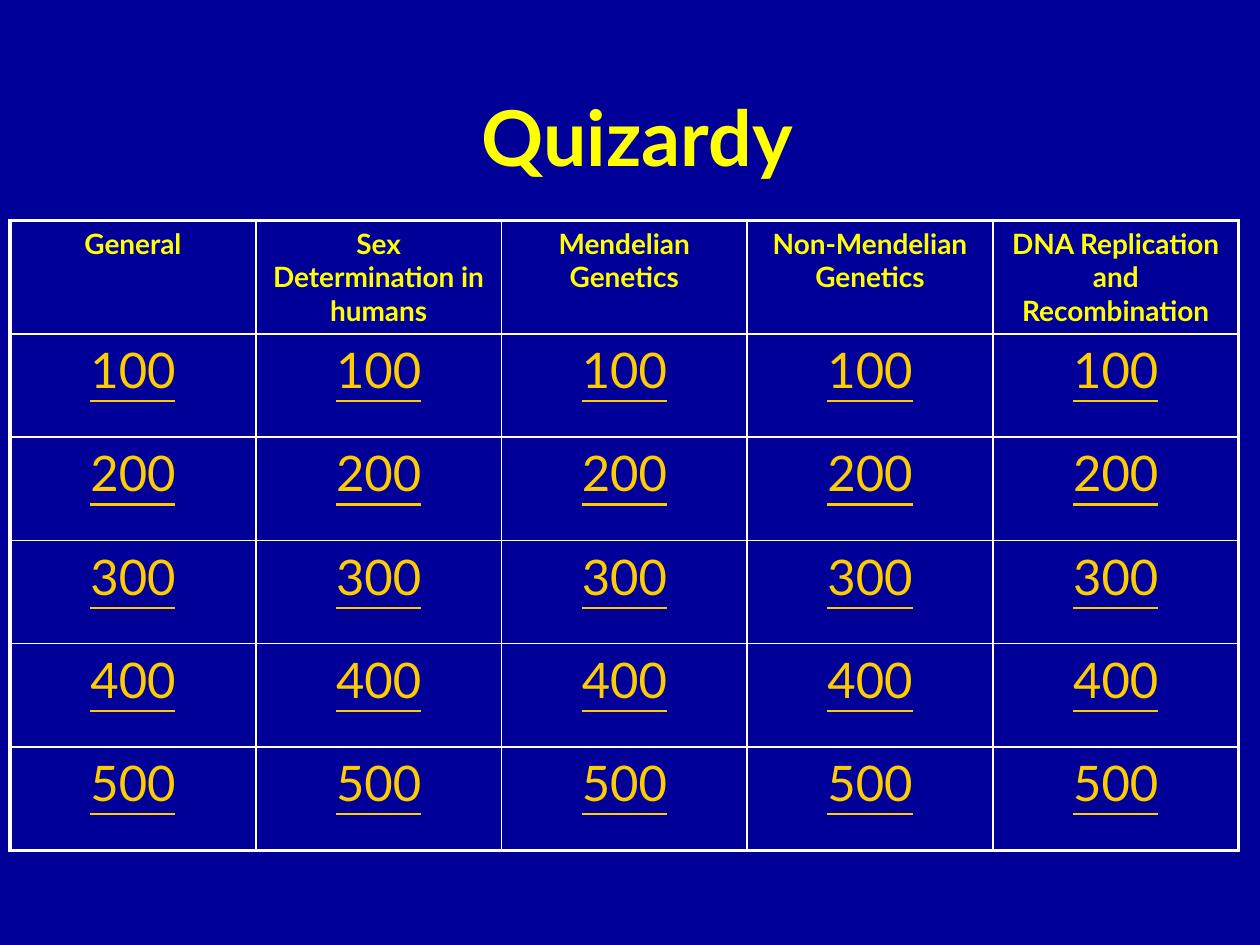
from lxml import etree
from pptx import Presentation
from pptx.dml.color import RGBColor
from pptx.enum.text import MSO_ANCHOR, PP_ALIGN
from pptx.oxml.ns import qn
from pptx.util import Inches, Pt

NAVY = RGBColor(0x00, 0x00, 0x99)
YELLOW = RGBColor(0xFF, 0xFF, 0x00)
GOLD = RGBColor(0xFF, 0xCC, 0x00)
WHITE = RGBColor(0xFF, 0xFF, 0xFF)

CATEGORIES = [
    "General",
    "Sex Determination in humans",
    "Mendelian Genetics",
    "Non-Mendelian Genetics",
    "DNA Replication and Recombination",
]
POINTS = [100, 200, 300, 400, 500]
INNER, OUTER = 1, 2.25


def write(frame, text, size, color, bold=False, underline=False):
    paragraph = frame.paragraphs[0]
    paragraph.alignment = PP_ALIGN.CENTER
    run = paragraph.add_run()
    run.text = text
    font = run.font
    font.name = "Lato"
    font.size = Pt(size)
    font.bold = bold
    font.underline = underline
    font.color.rgb = color


def add_border(cell, side, width):
    """Draw one white cell edge; side is L, R, T or B."""
    properties = cell._tc.get_or_add_tcPr()
    line = etree.SubElement(properties, qn(f"a:ln{side}"), w=str(Pt(width)))
    fill = etree.SubElement(line, qn("a:solidFill"))
    etree.SubElement(fill, qn("a:srgbClr"), val=str(WHITE))


prs = Presentation()
prs.slide_width = Inches(10)
prs.slide_height = Inches(7.5)
slide = prs.slides.add_slide(prs.slide_layouts[6])
slide.background.fill.solid()
slide.background.fill.fore_color.rgb = NAVY

title = slide.shapes.add_textbox(Inches(0.56), Inches(0.32), Inches(9), Inches(1.51)).text_frame
title.word_wrap = True
title.vertical_anchor = MSO_ANCHOR.MIDDLE
write(title, "Quizardy", size=44, color=YELLOW, bold=True)

rows = [CATEGORIES] + [[str(value)] * len(CATEGORIES) for value in POINTS]
last_row, last_column = len(rows) - 1, len(CATEGORIES) - 1
board = slide.shapes.add_table(
    len(rows), len(CATEGORIES), Inches(0.08), Inches(1.75), Inches(9.75), Inches(4.99)
).table
board.first_row = False
board.horz_banding = False
for column in board.columns:
    column.width = Inches(1.95)

for r, texts in enumerate(rows):
    board.rows[r].height = Inches(0.82 if r else 0.89)
    for c, text in enumerate(texts):
        cell = board.cell(r, c)
        if r == 0:
            write(cell.text_frame, text, size=16, color=YELLOW, bold=True)
        else:
            write(cell.text_frame, text, size=28, color=GOLD, underline=True)
        on_edge = {"L": c == 0, "R": c == last_column, "T": r == 0, "B": r == last_row}
        for side, outer in on_edge.items():
            add_border(cell, side, OUTER if outer else INNER)
        cell.fill.background()

prs.save("out.pptx")
